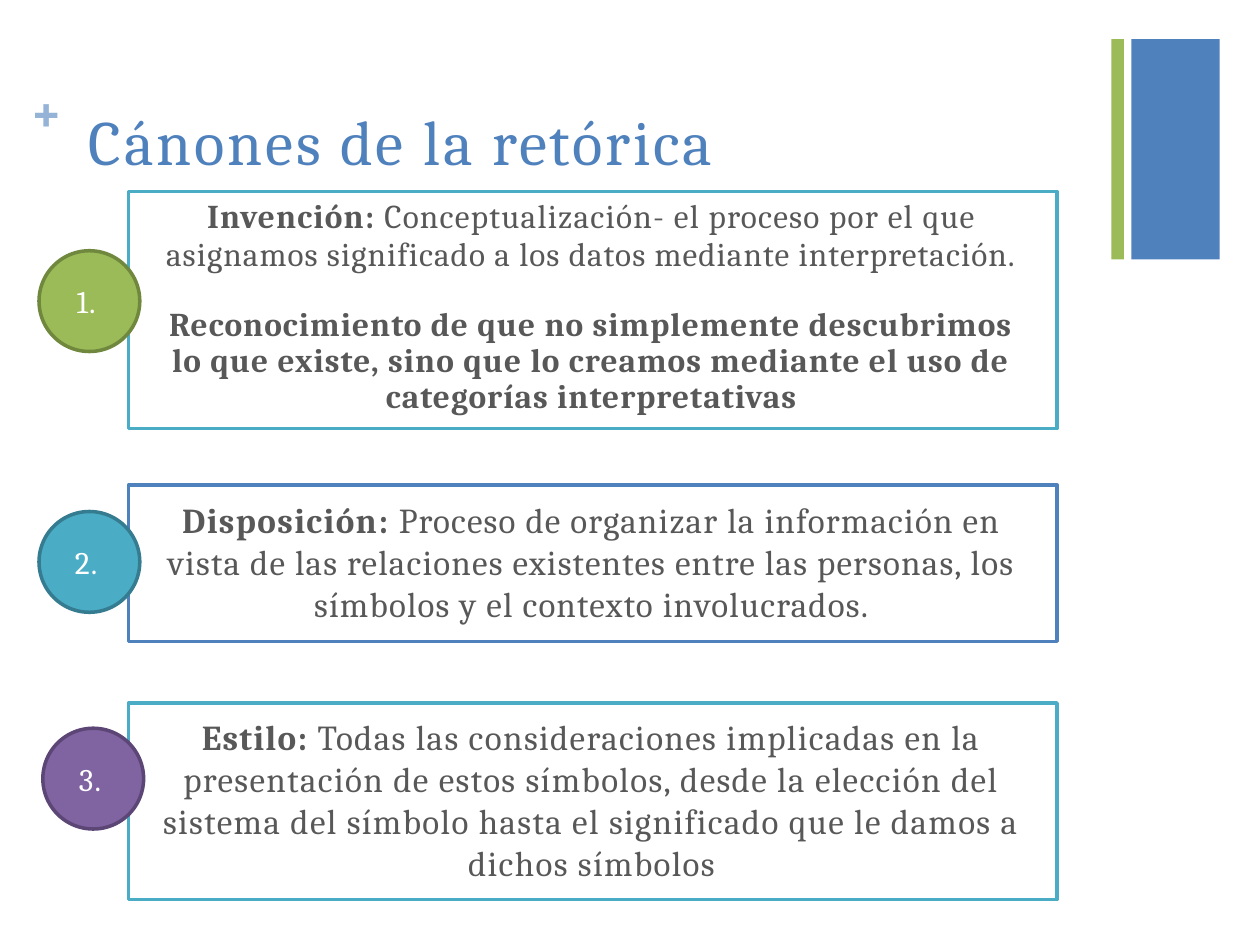
"""Build the slide on the canons of rhetoric: three framed definitions with numbered circles."""
from pptx import Presentation
from pptx.dml.color import RGBColor
from pptx.enum.shapes import MSO_SHAPE
from pptx.enum.text import MSO_ANCHOR, MSO_AUTO_SIZE, PP_ALIGN
from pptx.util import Inches, Pt

RECT, OVAL = MSO_SHAPE.RECTANGLE, MSO_SHAPE.OVAL
TOP, MIDDLE = MSO_ANCHOR.TOP, MSO_ANCHOR.MIDDLE
LEFT, CENTER = PP_ALIGN.LEFT, PP_ALIGN.CENTER
BLUE, GREEN, TEAL, PURPLE, GRAY = "4F81BC", "9BBA58", "4AACC5", "8063A1", "585858"


def add_shape(kind, box, fill=None, line=None):
    """Add a flat shape with optional fill and outline."""
    sp = s.shapes.add_shape(kind, *map(Inches, box))
    sp.shadow.inherit = False
    if fill:
        sp.fill.solid()
        sp.fill.fore_color.rgb = RGBColor.from_string(fill)
    else:
        sp.fill.background()
    if line:
        sp.line.color.rgb = RGBColor.from_string(line)
        sp.line.width = Pt(2)
    else:
        sp.line.fill.background()
    return sp


def write(sp, paragraphs, anchor, align, margins):
    """Write paragraphs given as (paragraph format, runs) pairs."""
    tf = sp.text_frame
    frame = {"word_wrap": True, "auto_size": MSO_AUTO_SIZE.NONE, "vertical_anchor": anchor}
    for side, value in zip(("left", "top", "right", "bottom"), margins):
        frame["margin_" + side] = Inches(value)
    for name, value in frame.items():
        setattr(tf, name, value)
    for i, (layout, runs) in enumerate(paragraphs):
        p = tf.add_paragraph() if i else tf.paragraphs[0]
        for name, value in {"alignment": align, **layout}.items():
            setattr(p, name, value)
        for text, size, color, bold, spacing in runs:
            r = p.add_run()
            r.text = text
            for name, value in {"name": "Cambria", "size": Pt(size), "bold": bold}.items():
                setattr(r.font, name, value)
            r.font.color.rgb = RGBColor.from_string(color)
            r.font._element.set("spc", str(spacing))


prs = Presentation()
prs.slide_width, prs.slide_height = Inches(10), Inches(7.5)
s = prs.slides.add_slide(prs.slide_layouts[5])

title = s.shapes.title
title.left, title.top, title.width, title.height = map(Inches, (0.2, 0.55, 5.69, 0.63))
write(title, [({"space_before": Pt(1)}, [
    ("+ ", 54, "94B3D6", True, 400),
    ("Cánones de la retórica", 36, BLUE, False, 165),
])], TOP, LEFT, (0.04, 0.01, 0, 0))
title.text_frame.paragraphs[0].runs[0].font._element.set("baseline", "36000")

for left, width, color in ((8.98, 0.7, BLUE), (8.82, 0.1, GREEN)):
    add_shape(RECT, (left, 0.31, width, 1.75), color)

exact = {"line_spacing": Pt(21.8)}
canons = [
    (1.52, 1.88, TEAL, 0.04, [
        (exact, [("Invención: ", 19, GRAY, True, 70),
                 ("Conceptualización- el proceso por el que", 19, GRAY, False, 75)]),
        (exact, [("asignamos significado a los datos mediante interpretación.",
                  19, GRAY, False, 63)]),
        ({"line_spacing": 0.9, "space_before": Pt(19.8)},
         [("Reconocimiento de que no simplemente descubrimos lo que existe, sino que lo "
           "creamos mediante el uso de categorías interpretativas", 19, GRAY, True, 62)]),
    ]),
    (3.85, 1.24, BLUE, 0.11, [
        ({}, [("Disposición: ", 20, GRAY, True, 80),
              ("Proceso de organizar la información en vista de las relaciones existentes "
               "entre las personas, los símbolos y el contexto involucrados.",
               20, GRAY, False, 68)]),
    ]),
    (5.58, 1.56, TEAL, 0.1, [
        ({}, [("Estilo: ", 20, GRAY, True, 70),
              ("Todas las consideraciones implicadas en la presentación de estos símbolos, "
               "desde la elección del sistema del símbolo hasta el significado que le damos "
               "a dichos símbolos", 20, GRAY, False, 78)]),
    ]),
]
for top, height, color, inset, paragraphs in canons:
    sp = add_shape(RECT, (1.02, top, 7.37, height), line=color)
    write(sp, paragraphs, TOP, CENTER, (0.2, inset, 0.22, 0))

circles = [(0.31, 1.99, GREEN, "70883E"), (0.31, 4.06, TEAL, "357C91"),
           (0.34, 5.78, PURPLE, "5C4676")]
for number, (left, top, fill, line) in enumerate(circles, 1):
    sp = add_shape(OVAL, (left, top, 0.8, 0.8), fill, line)
    write(sp, [({}, [(f"{number}.", 18, "FFFFFF", False, 70)])], MIDDLE, CENTER, (0, 0, 0.05, 0))

prs.save("out.pptx")
